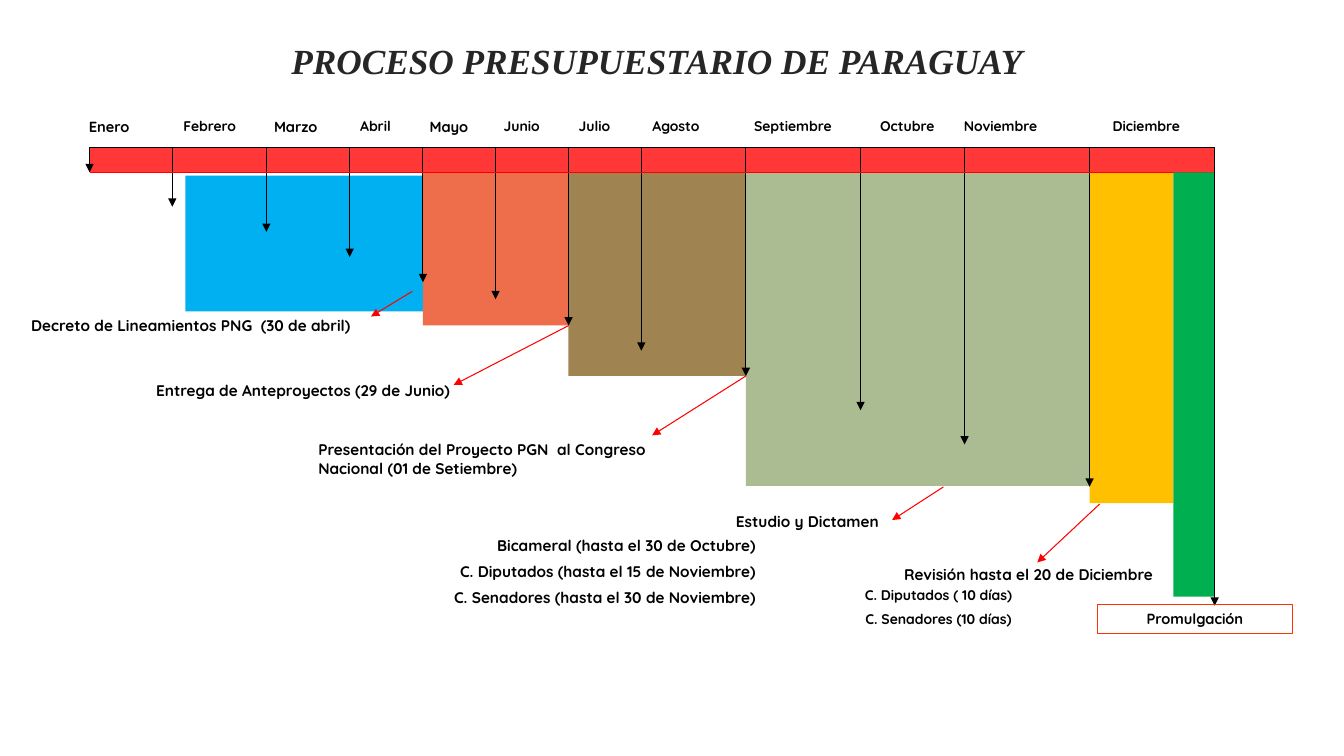
import pptx
import pptx.util
import pptx.oxml
import pptx.oxml.ns
import pptx.dml.color
import pptx.enum.shapes
import pptx.enum.text
from dataclasses import dataclass

Pt = pptx.util.Pt
Align = pptx.enum.text.PP_ALIGN
Anchor = pptx.enum.text.MSO_ANCHOR
RECT = pptx.enum.shapes.MSO_SHAPE.RECTANGLE

COLORS = {
    "black": "000000", "title": "262626", "red": "FF0000", "bar": "FF3737",
    "frame": "FF3300", "gold": "FFC000", "sage": "ACBC92", "brown": "9F8351",
    "blue": "00B0F0", "coral": "EE6E4B", "green": "00B050",
}
LEFT, RIGHT, TOP, BASE = 64, 867.6, 105.1, 123.1
LABEL_W = 112


@dataclass
class Block:
    color: str
    x: float
    y: float
    w: float
    h: float


@dataclass
class Month:
    name: str
    mid: float
    x: float
    end: float
    size: float = 10


@dataclass
class Note:
    text: str
    x: float
    y: float
    w: float
    h: float
    align: Align = Align.LEFT
    size: float = 11


@dataclass
class Link:
    x1: float
    y1: float
    x2: float
    y2: float


BLOCKS = [
    Block("gold", 778.3, BASE, 59.8, 236.2),
    Block("sage", 532.8, BASE, 245.5, 223.9),
    Block("brown", 406.1, 110.9, 126.7, 157.7),
    Block("blue", 132.5, 125.5, 238.3, 97),
    Block("coral", 302.1, TOP, 104.2, 127.4),
    Block("bar", LEFT, TOP, RIGHT - LEFT, BASE - TOP),
]
GREEN = Block("green", 838.1, BASE, 29.5, 303.1)

MONTHS = [
    Month("Enero", 77.9, LEFT, BASE, 10.5),
    Month("Febrero", 149.8, 123.1, 147.6),
    Month("Marzo", 211.2, 190.3, 165.6, 10.5),
    Month("Abril", 268.2, 249.8, 183.6),
    Month("Mayo", 320.6, 302.1, 201.6, 10.5),
    Month("Junio", 372.6, 354, 213.8),
    Month("Julio", 424.6, 406.1, 232.5),
    Month("Agosto", 482.8, 458.1, 250.5),
    Month("Septiembre", 566.3, 532.8, 268.6),
    Month("Octubre", 648, 614.7, 293),
    Month("Noviembre", 714.6, 689, 317.5),
    Month("Diciembre", 818.8, 778.3, 347.7),
]

NOTES = [
    Note("Decreto de Lineamientos PNG  (30 de abril)", 15.1, 222.5, 264, 21),
    Note("Entrega de Anteproyectos (29 de Junio)", 104.4, 268.6, 238, 21),
    Note("Presentación del Proyecto PGN  al Congreso Nacional (01 de Setiembre)",
         220.3, 311, 263.5, 34.6),
    Note("Bicameral (hasta el 30 de Octubre)\n"
         "C. Diputados (hasta el 15 de Noviembre)\n"
         "C. Senadores (hasta el 30 de Noviembre)",
         234.7, 379.4, 312.5, 60.5, Align.RIGHT),
    Note("Estudio y Dictamen", 382.3, 362.2, 252.7, 21, Align.RIGHT),
    Note("Revisión hasta el 20 de Diciembre", 510.5, 400.3, 320.4, 21, Align.RIGHT),
    Note("C. Diputados ( 10 días)\nC. Senadores (10 días)",
         532.8, 415.4, 275, 38.2, Align.CENTER, 10),
]

LINKS = [
    Link(294.5, 208.1, 265, 226.1),
    Link(532.8, 268.6, 465.8, 311),
    Link(673.9, 347.8, 637.2, 371.5),
    Link(406.1, 232.6, 324, 275),
    Link(785.5, 360, 740.9, 401.8),
]


def paint(name: str) -> pptx.dml.color.RGBColor:
    return pptx.dml.color.RGBColor.from_string(COLORS[name])


def write(frame, text: str, *, size: float, align=Align.CENTER, font="Quicksand",
          color="black", italic=False, anchor=Anchor.TOP) -> None:
    frame.word_wrap = True
    frame.vertical_anchor = anchor
    for i, row in enumerate(text.split("\n")):
        para = frame.add_paragraph() if i else frame.paragraphs[0]
        para.alignment = align
        if i:
            para.space_before = Pt(size / 2)
        run = para.add_run()
        run.text = row
        run.font.name = font
        run.font.size = Pt(size)
        run.font.bold = True
        run.font.italic = italic
        run.font.color.rgb = paint(color)


def label(slide, text: str, x: float, y: float, w: float, h: float, **style) -> None:
    box = slide.shapes.add_textbox(Pt(x), Pt(y), Pt(w), Pt(h))
    write(box.text_frame, text, **style)


def block(slide, item: Block):
    shape = slide.shapes.add_shape(RECT, Pt(item.x), Pt(item.y), Pt(item.w), Pt(item.h))
    shape.shadow.inherit = False
    shape.fill.solid()
    shape.fill.fore_color.rgb = paint(item.color)
    shape.line.fill.background()
    return shape


def line(slide, item: Link, color: str, arrow: bool = True) -> None:
    kind = pptx.enum.shapes.MSO_CONNECTOR.STRAIGHT
    wire = slide.shapes.add_connector(
        kind, Pt(item.x1), Pt(item.y1), Pt(item.x2), Pt(item.y2))
    wire.line.color.rgb = paint(color)
    wire.line.width = Pt(0.75)
    if arrow:
        tail = pptx.oxml.parse_xml(
            f'<a:tailEnd {pptx.oxml.ns.nsdecls("a")} type="triangle"/>')
        wire.line._get_or_add_ln().append(tail)
    wire._element.spPr.append(
        pptx.oxml.parse_xml(f'<a:effectLst {pptx.oxml.ns.nsdecls("a")}/>'))


def main() -> None:
    deck = pptx.Presentation()
    deck.slide_width, deck.slide_height = Pt(960), Pt(540)
    slide = deck.slides.add_slide(deck.slide_layouts[6])

    # Title
    label(slide, "PROCESO PRESUPUESTARIO DE PARAGUAY", 37.4, 22, 864, 42,
          size=25.2, font="Times New Roman", color="title", italic=True,
          anchor=Anchor.MIDDLE)

    # Stages and year bar
    for item in BLOCKS:
        block(slide, item)
    line(slide, Link(LEFT, TOP, RIGHT, TOP), "black", arrow=False)

    # Months
    for month in MONTHS:
        label(slide, month.name, month.mid - LABEL_W / 2, 80.6, LABEL_W, 20,
              size=month.size)
        line(slide, Link(month.x, TOP, month.x, month.end), "black")
    line(slide, Link(LEFT, BASE, RIGHT, BASE), "red", arrow=False)

    # Milestones
    for link in LINKS:
        line(slide, link, "red")
    for note in NOTES:
        label(slide, note.text, note.x, note.y, note.w, note.h,
              size=note.size, align=note.align)

    # Enactment
    block(slide, GREEN)
    line(slide, Link(RIGHT, TOP, RIGHT, 432.7), "black")
    final = block(slide, Block("frame", 784.1, 432, 139, 20.2))
    final.fill.background()
    final.line.color.rgb = paint("frame")
    final.line.width = Pt(0.75)
    write(final.text_frame, "Promulgación", size=10.5)

    deck.save("out.pptx")


if __name__ == "__main__":
    main()
